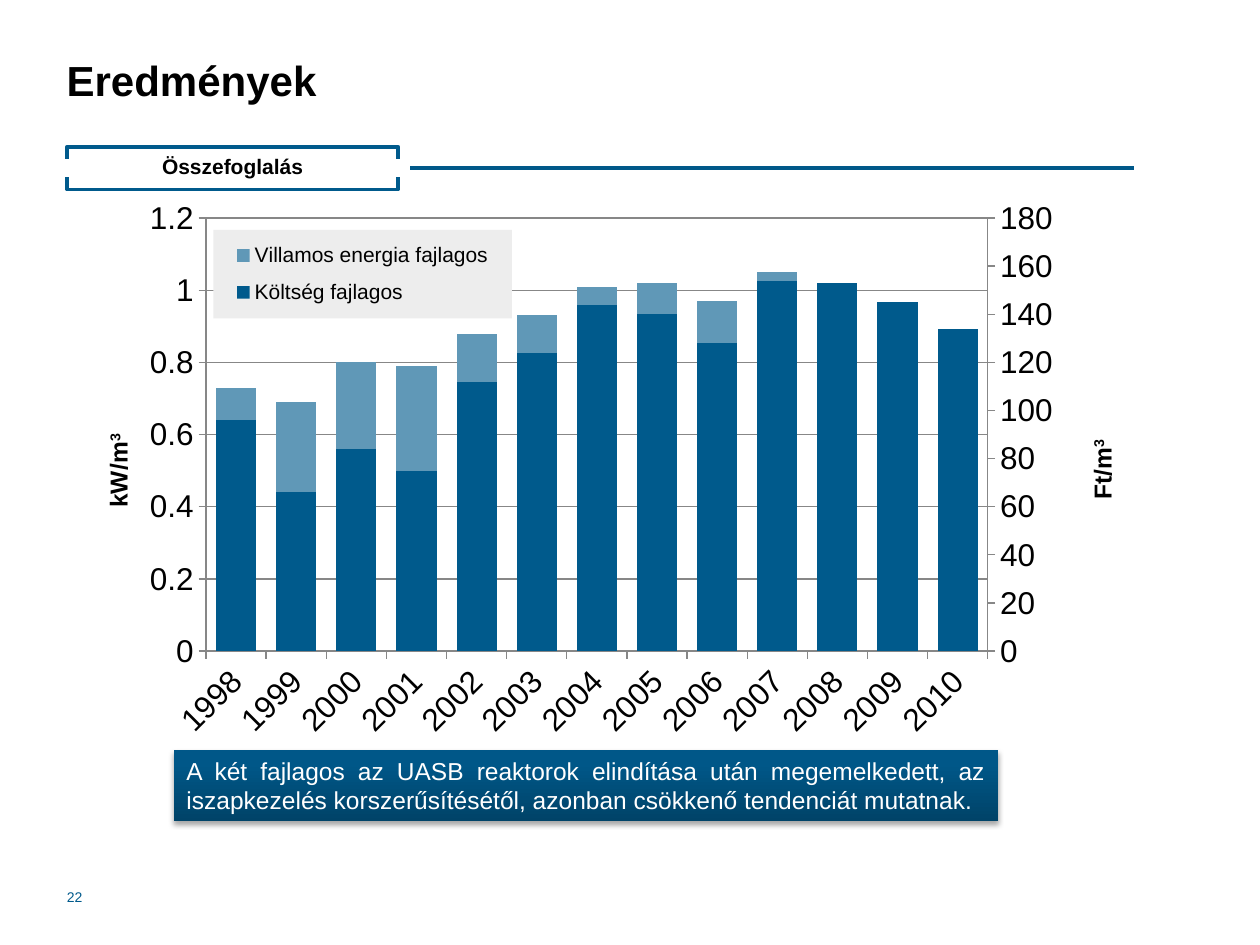
"""Build the results slide with a two-axis column chart and its summary."""
from copy import deepcopy
from dataclasses import dataclass

from lxml.etree import SubElement
from pptx import Presentation
from pptx.chart.axis import CategoryAxis, ValueAxis
from pptx.chart.data import CategoryChartData
from pptx.dml.color import RGBColor
from pptx.enum.chart import XL_CHART_TYPE, XL_LEGEND_POSITION, XL_TICK_MARK
from pptx.enum.shapes import MSO_CONNECTOR, MSO_SHAPE
from pptx.enum.text import MSO_ANCHOR, MSO_AUTO_SIZE, PP_ALIGN
from pptx.oxml import parse_xml
from pptx.oxml.ns import nsdecls, qn
from pptx.util import Cm, Pt

BLUE, LIGHT_BLUE, GRAY = "005A8C", "6098B7", "878787"
BLACK, WHITE = "000000", "FFFFFF"
YEARS = [str(year) for year in range(1998, 2011)]
ENERGY = [0.73, 0.69, 0.8, 0.79, 0.88, 0.93, 1.01, 1.02, 0.97, 1.05, 0.96, 0.88, 0.85]
COST = [96, 66, 84, 75, 112, 124, 144, 140, 128, 154, 153, 145, 134]


@dataclass
class Rule:
    left: float
    right: float
    color: str
    width: float


@dataclass
class Scale:
    unit: str
    maximum: float
    step: float
    title_x: float
    title_y: float


RULES = [Rule(7.82, 22.86, "005889", 2.5), Rule(1.07, 8.26, WHITE, 10)]
LEFT_SCALE = Scale("kW/m", 1.2, 0.2, 0.03, 0.43)
RIGHT_SCALE = Scale("Ft/m", 180, 20, 0.95, 0.44)


def rgb(value: str) -> RGBColor:
    return RGBColor.from_string(value)


def write(para, text: str, *, size=12, color=BLACK, bold=False, align=None, baseline=0):
    span = para.add_run()
    span.text = text
    span.font.name = "Arial"
    span.font.size = Pt(size)
    span.font.bold = bold
    span.font.color.rgb = rgb(color)
    if align is not None:
        para.alignment = align
    if baseline:
        span.font._element.set("baseline", str(baseline))


def place(shape, left, top, width, height) -> None:
    shape.left, shape.top = Cm(left), Cm(top)
    shape.width, shape.height = Cm(width), Cm(height)


def set_frame(frame, anchor=MSO_ANCHOR.MIDDLE):
    frame.word_wrap = True
    frame.auto_size = MSO_AUTO_SIZE.NONE
    frame.vertical_anchor = anchor
    return frame.paragraphs[0]


def draw_rule(page, rule: Rule) -> None:
    line = page.shapes.add_connector(
        MSO_CONNECTOR.STRAIGHT, Cm(rule.left), Cm(3.39), Cm(rule.right), Cm(3.39))
    line.line.color.rgb = rgb(rule.color)
    line.line.width = Pt(rule.width)
    SubElement(line._element.spPr, qn("a:effectLst"))


def set_layout(parent, inner=False, **fractions: float) -> None:
    for old in parent.findall(qn("c:layout")):
        parent.remove(old)
    layout = parse_xml(f"<c:layout {nsdecls('c')}><c:manualLayout/></c:layout>")
    values = {"layoutTarget": "inner"} if inner else {}
    values.update({f"{side}Mode": "edge" for side in "xy"})
    values.update(fractions)
    for name, value in values.items():
        SubElement(layout[0], qn(f"c:{name}")).set("val", str(value))
    overlay = parent.find(qn("c:overlay"))
    if overlay is None:
        parent.insert(0, layout)
    else:
        overlay.addprevious(layout)


def format_axis(axis) -> None:
    axis.format.line.color.rgb = rgb(GRAY)
    axis.major_tick_mark = XL_TICK_MARK.OUTSIDE
    axis.minor_tick_mark = XL_TICK_MARK.NONE
    axis.tick_labels.font.size = Pt(18)
    axis.tick_labels.font.color.rgb = rgb(BLACK)


def format_value_axis(axis: ValueAxis, scale: Scale) -> None:
    format_axis(axis)
    axis.minimum_scale, axis.maximum_scale = 0, scale.maximum
    axis.major_unit = scale.step
    axis.tick_labels.number_format = "General"
    axis.tick_labels.number_format_is_linked = False
    frame = axis.axis_title.text_frame
    frame._txBody.bodyPr.set("rot", "-5400000")
    frame._txBody.bodyPr.set("vert", "horz")
    para = frame.paragraphs[0]
    write(para, scale.unit, size=14, bold=True)
    write(para, "3", size=14, bold=True, baseline=30000)
    set_layout(axis.axis_title._element, x=scale.title_x, y=scale.title_y)


def add_right_axis(chart) -> ValueAxis:
    area = chart._chartSpace.chart.plotArea
    bars = area.find(qn("c:barChart"))
    categories, values = area.find(qn("c:catAx")), area.find(qn("c:valAx"))
    right_bars, right_categories, right_values = map(deepcopy, (bars, categories, values))
    bars.remove(bars.findall(qn("c:ser"))[1])
    right_bars.remove(right_bars.findall(qn("c:ser"))[0])
    bars.addnext(right_bars)
    values.addnext(right_values)
    right_values.addnext(right_categories)
    identifiers = {
        axis.find(qn("c:axId")).get("val"): number
        for axis, number in ((categories, "3"), (values, "4"))}
    for part in (right_bars, right_categories, right_values):
        for node in part.findall(qn("c:axId")) + part.findall(qn("c:crossAx")):
            node.set("val", identifiers[node.get("val")])
    right_values.find(qn("c:axPos")).set("val", "r")
    right_values.find(qn("c:crosses")).set("val", "max")
    CategoryAxis(right_categories).visible = False
    right_axis = ValueAxis(right_values)
    right_axis.has_major_gridlines = False
    return right_axis


def add_legend(chart) -> None:
    chart.has_legend = True
    legend = chart.legend
    legend.position = XL_LEGEND_POSITION.LEFT
    legend.include_in_layout = True
    legend.font.size = Pt(12)
    legend.font.name = "Arial"
    legend.font.color.rgb = rgb(BLACK)
    set_layout(legend._element, x=0.137, y=0.073, w=0.279, h=0.158)
    legend._element.find(qn("c:overlay")).addnext(parse_xml(
        f"<c:spPr {nsdecls('c', 'a')}><a:solidFill><a:srgbClr val='EDEDED'/>"
        "</a:solidFill></c:spPr>"))


def add_results_chart(page) -> None:
    data = CategoryChartData()
    data.categories = YEARS
    data.add_series("Villamos energia fajlagos", ENERGY)
    data.add_series("Költség fajlagos", COST)
    chart = page.shapes.add_chart(
        XL_CHART_TYPE.COLUMN_CLUSTERED, Cm(1.35), Cm(3.81), Cm(21.56), Cm(11.28), data).chart
    chart.has_title = False
    chart.font.name, chart.font.size = "Arial", Pt(18)
    chart.font.color.rgb = rgb(BLACK)
    plot = chart.plots[0]
    plot.gap_width = 50
    plot.vary_by_categories = False
    for series, color in zip(plot.series, (LIGHT_BLUE, BLUE)):
        series.format.fill.solid()
        series.format.fill.fore_color.rgb = rgb(color)
    left_axis = chart.value_axis
    right_axis = add_right_axis(chart)
    format_axis(chart.category_axis)
    chart.category_axis._element.find(qn("c:txPr")).bodyPr.set("rot", "-2700000")
    format_value_axis(left_axis, LEFT_SCALE)
    format_value_axis(right_axis, RIGHT_SCALE)
    left_axis.major_gridlines.format.line.color.rgb = rgb(GRAY)
    set_layout(chart._chartSpace.chart.plotArea, inner=True, x=0.13, y=0.052, w=0.731, h=0.774)
    add_legend(chart)


def add_rectangle(page, left, top, width, height):
    box = page.shapes.add_shape(
        MSO_SHAPE.RECTANGLE, Cm(left), Cm(top), Cm(width), Cm(height))
    box.shadow.inherit = False
    return box


def add_banner(page, text: str) -> None:
    box = add_rectangle(page, 3.51, 15.11, 16.61, 1.45)
    box.line.fill.background()
    stops = "".join(
        f"<a:gs pos='{position}000'><a:srgbClr val='{color}'/></a:gs>"
        for position, color in ((0, "004368"), (80, "005788"), (100, "005888")))
    box._element.spPr.find(qn("a:prstGeom")).addnext(parse_xml(
        f"<a:gradFill {nsdecls('a')} rotWithShape='1'><a:gsLst>{stops}</a:gsLst>"
        "<a:lin ang='16200000' scaled='0'/></a:gradFill>"))
    box._element.spPr.find(qn("a:effectLst")).append(parse_xml(
        f"<a:outerShdw {nsdecls('a')} blurRad='{Pt(3.1)}' dist='{Pt(1.8)}' dir='5400000' "
        "rotWithShape='0'><a:srgbClr val='000000'><a:alpha val='35000'/></a:srgbClr>"
        "</a:outerShdw>"))
    write(set_frame(box.text_frame), text, size=14, color=WHITE, align=PP_ALIGN.JUSTIFY)


def add_label(page, body) -> None:
    label_place = (1.35, 2.96, 6.68, 0.86)
    frame = add_rectangle(page, *label_place)
    frame.fill.solid()
    frame.fill.fore_color.rgb = rgb(WHITE)
    frame.line.color.rgb = rgb(BLUE)
    frame.line.width = Pt(2)
    for rule in RULES:
        draw_rule(page, rule)
    place(body, *label_place)
    body.text_frame.margin_top, body.text_frame.margin_bottom = Cm(0.05), Cm(0.15)
    para = set_frame(body.text_frame)
    properties = para._p.get_or_add_pPr()
    properties.set("marL", "0")
    properties.set("indent", "0")
    SubElement(properties, qn("a:buNone"))
    para.space_before = Pt(0)
    write(para, "Összefoglalás", bold=True, align=PP_ALIGN.CENTER)
    page.shapes._spTree.append(body._element)


def main() -> None:
    deck = Presentation()
    deck.slide_width, deck.slide_height = Cm(25.4), Cm(19.05)
    page = deck.slides.add_slide(deck.slide_layouts[1])
    title, body = page.shapes.title, page.placeholders[1]
    place(title, 1.09, 0.67, 18.59, 1.88)
    write(set_frame(title.text_frame), "Eredmények", size=24, bold=True, align=PP_ALIGN.LEFT)
    add_label(page, body)
    add_results_chart(page)
    add_banner(page, "A két fajlagos az UASB reaktorok elindítása után megemelkedett, az "
               "iszapkezelés korszerűsítésétől, azonban csökkenő tendenciát mutatnak.")
    number = page.shapes.add_textbox(Cm(1.35), Cm(17.87), Cm(0.74), Cm(0.38)).text_frame
    number.margin_left = number.margin_right = number.margin_top = number.margin_bottom = 0
    write(set_frame(number, MSO_ANCHOR.BOTTOM), "22", size=8, color=BLUE)
    deck.save("out.pptx")


if __name__ == "__main__":
    main()
